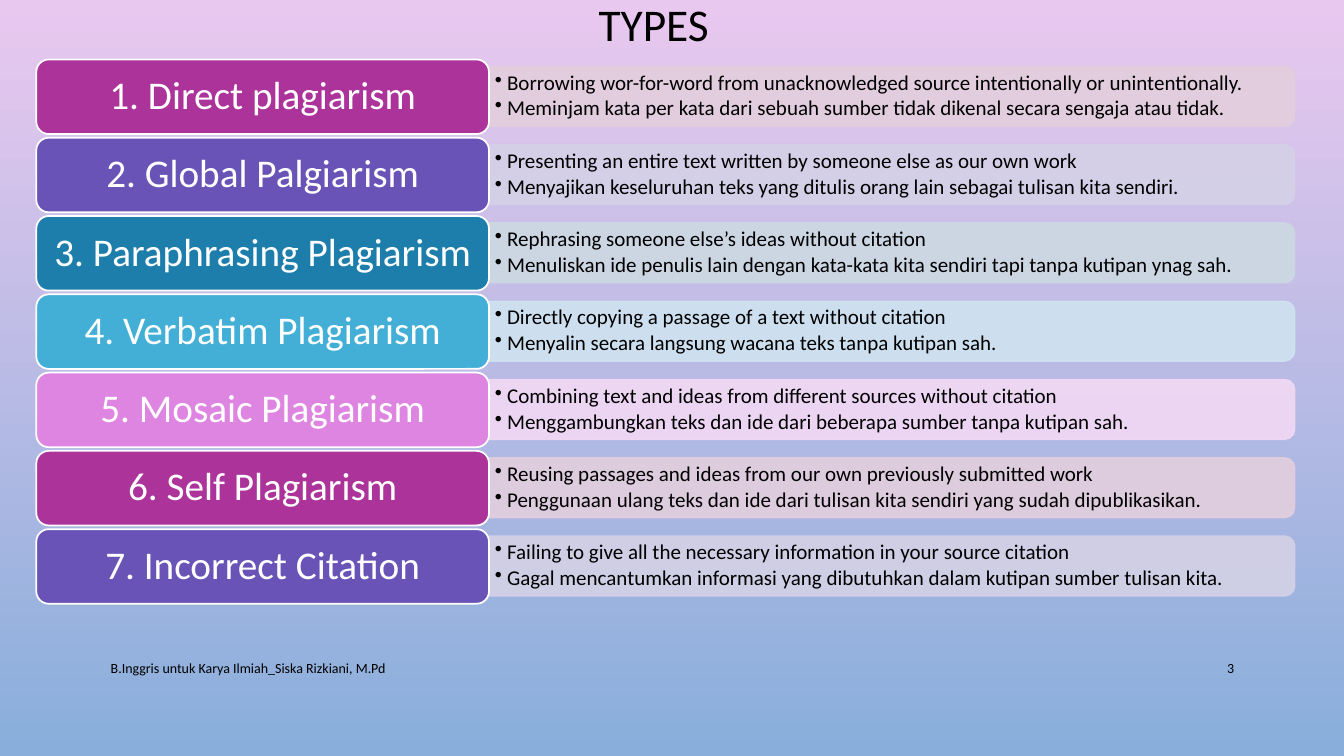
from lxml.etree import SubElement
from pptx import Presentation
from pptx.dml.color import RGBColor
from pptx.enum.shapes import MSO_SHAPE
from pptx.enum.text import MSO_ANCHOR, PP_ALIGN
from pptx.oxml.ns import qn
from pptx.util import Inches, Pt

ROWS = [
    ("1. Direct plagiarism", "AC339A", "E3CEDE",
     "Borrowing wor-for-word from unacknowledged source intentionally or unintentionally.",
     "Meminjam kata per kata dari sebuah sumber tidak dikenal secara sengaja atau tidak."),
    ("2. Global Palgiarism", "6953B7", "D4D1E6",
     "Presenting an entire text written by someone else as our own work",
     "Menyajikan keseluruhan teks yang ditulis orang lain sebagai tulisan kita sendiri."),
    ("3. Paraphrasing Plagiarism", "1D7EAB", "CDD8E2",
     "Rephrasing someone else’s ideas without citation",
     "Menuliskan ide penulis lain dengan kata-kata kita sendiri tapi tanpa kutipan ynag sah."),
    ("4. Verbatim Plagiarism", "43AFD6", "CFE3F0",
     "Directly copying a passage of a text without citation",
     "Menyalin secara langsung wacana teks tanpa kutipan sah."),
    ("5. Mosaic Plagiarism", "DE85E1", "F2D9F4",
     "Combining text and ideas from different sources without citation",
     "Menggambungkan teks dan ide dari beberapa sumber tanpa kutipan sah."),
    ("6. Self Plagiarism", "AC339A", "E3CEDE",
     "Reusing passages and ideas from our own previously submitted work",
     "Penggunaan ulang teks dan ide dari tulisan kita sendiri yang sudah dipublikasikan."),
    ("7. Incorrect Citation", "6953B7", "D4D1E6",
     "Failing to give all the necessary information in your source citation",
     "Gagal mencantumkan informasi yang dibutuhkan dalam kutipan sumber tulisan kita."),
]


def color(code):
    """Turn a hex string into a colour."""
    return RGBColor.from_string(code)


def write(frame, text, size, tone="000000", align=PP_ALIGN.LEFT, space=1.0):
    """Fill a text frame and format its paragraphs."""
    frame.word_wrap = True
    frame.vertical_anchor = MSO_ANCHOR.MIDDLE
    frame.text = text
    for para in frame.paragraphs:
        para.alignment = align
        para.line_spacing = space
        for run in para.runs:
            run.font.name = "Calibri"
            run.font.size = Pt(size)
            run.font.color.rgb = color(tone)


def add_text(slide, left, top, width, height, text, size, **style):
    """Add a text box and return its frame."""
    box = slide.shapes.add_textbox(
        Inches(left), Inches(top), Inches(width), Inches(height))
    write(box.text_frame, text, size, **style)
    return box.text_frame


def add_block(slide, kind, left, top, width, height, fill, line):
    """Add a filled and outlined shape."""
    block = slide.shapes.add_shape(
        kind, Inches(left), Inches(top), Inches(width), Inches(height))
    block.shadow.inherit = False
    block.fill.solid()
    block.fill.fore_color.rgb = color(fill)
    block.line.color.rgb = color(line)
    block.line.width = Pt(1.25)
    return block


def add_strip(slide, left, top, width, height, tint, lines):
    """Add a translucent strip, rounded on the right, with two bullets."""
    shift = (width - height) / 2
    strip = add_block(slide, MSO_SHAPE.ROUND_2_SAME_RECTANGLE,
                      left + shift, top - shift, height, width, tint, tint)
    strip.rotation = 90
    for tone in strip._element.spPr.iter(qn("a:srgbClr")):
        SubElement(tone, qn("a:alpha"), val="90000")
    frame = add_text(slide, left, top + 0.03, width - 0.03, height - 0.06,
                     "\n".join(lines), 15, space=0.9)
    frame.margin_left = frame.margin_right = Inches(0.06)
    frame.margin_top = frame.margin_bottom = Inches(0.03)
    for para in frame.paragraphs:
        para.space_after = Pt(2.25)
        props = para._p.get_or_add_pPr()
        props.set("marL", str(Inches(0.12)))
        props.set("indent", str(-Inches(0.12)))
        SubElement(props, qn("a:buChar"), char="•")


def add_row(slide, left, top, width, height, row):
    """Add one type of plagiarism: its label and its strip."""
    name, fill, tint, *lines = row
    side = 4.49
    add_strip(slide, left + side, top + 0.07, width - side, height - 0.15, tint, lines)
    label = add_block(slide, MSO_SHAPE.ROUNDED_RECTANGLE,
                      left, top, side, height, fill, "FFFFFF")
    write(label.text_frame, name, 28, tone="FFFFFF", align=PP_ALIGN.CENTER, space=0.9)


def add_foot(slide, left, top, width, height):
    """Add the footer and the slide number."""
    add_text(slide, left, top, 7.3, height,
             "B.Inggris untuk Karya Ilmiah_Siska Rizkiani, M.Pd", 10)
    add_text(slide, left + width - 0.84, top, 0.84, height, "3", 10,
             align=PP_ALIGN.RIGHT)


def paint(slide):
    """Give the slide its vertical gradient."""
    fill = slide.background.fill
    fill.gradient()
    fill.gradient_angle = 270
    for stop, code in zip(fill.gradient_stops, ("E9C8EF", "89AEDB")):
        stop.color.rgb = color(code)


def main():
    """Build and save the slide."""
    deck = Presentation()
    deck.slide_width, deck.slide_height = Inches(13.33), Inches(7.5)
    slide = deck.slides.add_slide(deck.slide_layouts[6])
    paint(slide)
    add_text(slide, 0.74, 0, 11.59, 0.54, "TYPES ", 32.4,
             align=PP_ALIGN.CENTER, space=0.9)
    pitch = 4.66 / 6
    for i, row in enumerate(ROWS):
        add_row(slide, 0.36, 0.59 + i * pitch, 12.48, 0.74, row)
    add_foot(slide, 1, 6.43, 11.34, 0.4)
    deck.save("out.pptx")


if __name__ == "__main__":
    main()
